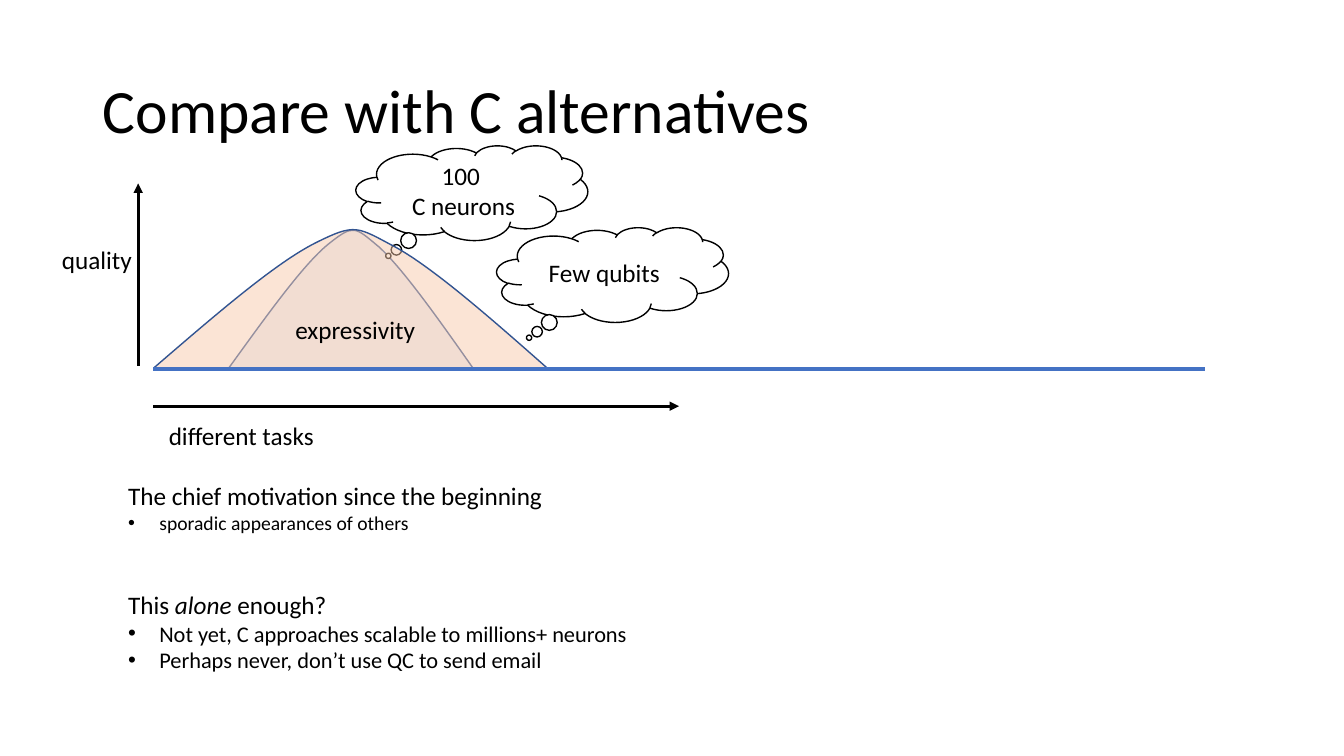
import lxml.etree
import pptx
import pptx.dml.color
import pptx.enum.shapes
import pptx.enum.text
import pptx.oxml.ns
import pptx.util

SLIDE_WIDTH = pptx.util.Inches(13.33)
SLIDE_HEIGHT = pptx.util.Inches(7.5)
FONT = "Calibri"
COLORS = {
    "ink": "000000",
    "paper": "FFFFFF",
    "baseline": "4472C4",
    "hill_edge": "325491",
    "neurons": "DAE3F3",
    "qubits": "F8CBAD",
}
HILL_TOP = 30.4
HILL_BOTTOM = 48.67
ALIGN = pptx.enum.text.PP_ALIGN
ANCHOR = pptx.enum.text.MSO_ANCHOR


def columns(count):
    """Length of a number of columns, 100 to the slide's width."""
    return round(SLIDE_WIDTH * count / 100)


def rows(count):
    """Length of a number of rows, 100 to the slide's height."""
    return round(SLIDE_HEIGHT * count / 100)


def box(left, top, width, height):
    return columns(left), rows(top), columns(width), rows(height)


def color(name):
    return pptx.dml.color.RGBColor.from_string(COLORS[name])


def add_xml(parent, tag, **attributes):
    return lxml.etree.SubElement(parent, pptx.oxml.ns.qn(tag), attributes)


def write(paragraph, text, size=18, align=ALIGN.LEFT, spacing=1.0, italic=None):
    """Fill a paragraph; the part given as italic is slanted."""
    paragraph.alignment = align
    paragraph.line_spacing = spacing
    paragraph.space_before = pptx.util.Pt(0)
    before, slanted, after = text.partition(italic) if italic else (text, "", "")
    for part in filter(None, (before, slanted, after)):
        run = paragraph.add_run()
        run.text = part
        run.font.name = FONT
        run.font.size = pptx.util.Pt(size)
        run.font.italic = part == italic
        run.font.color.rgb = color("ink")


def place(placeholder, area):
    placeholder.left, placeholder.top, placeholder.width, placeholder.height = area
    placeholder.text_frame.word_wrap = True
    placeholder.text_frame.auto_size = pptx.enum.text.MSO_AUTO_SIZE.NONE


def set_indent(paragraph, margin, hanging, bullet):
    properties = paragraph._p.get_or_add_pPr()
    properties.set("marL", str(pptx.util.Inches(margin)))
    properties.set("indent", str(pptx.util.Inches(-hanging)))
    if bullet:
        add_xml(properties, "a:buFont", typeface="Arial")
        add_xml(properties, "a:buChar", char="•")
    else:
        add_xml(properties, "a:buNone")


def fill_list(placeholder, area, heading, points, point_size, italic=None):
    place(placeholder, area)
    frame = placeholder.text_frame
    frame.vertical_anchor = ANCHOR.TOP
    first = frame.paragraphs[0]
    first.level = 1
    write(first, heading, italic=italic)
    set_indent(first, 0.5, 0, bullet=False)
    for point in points:
        paragraph = frame.add_paragraph()
        paragraph.level = 1
        write(paragraph, point, size=point_size)
        set_indent(paragraph, 0.81, 0.31, bullet=True)


def add_label(slide, text, left, top, width):
    label = slide.shapes.add_textbox(*box(left, top, width, 5.33))
    label.text_frame.word_wrap = True
    write(label.text_frame.paragraphs[0], text)


def add_line(slide, start, end, weight, color_name="ink", arrow=False):
    line = slide.shapes.add_connector(
        pptx.enum.shapes.MSO_CONNECTOR.STRAIGHT,
        columns(start[0]), rows(start[1]), columns(end[0]), rows(end[1]))
    line.line.color.rgb = color(color_name)
    line.line.width = pptx.util.Pt(weight)
    if arrow:
        add_xml(line.line._get_or_add_ln(), "a:tailEnd", type="triangle")
    add_xml(line._element.spPr, "a:effectLst")


def curve_outline(shape, points):
    """Redraw a freeform as a chain of cubic curves through the points."""
    outline = next(shape._element.iter(pptx.oxml.ns.qn("a:path")))
    for segment in list(outline):
        outline.remove(segment)
    for i, (x, y) in enumerate(points):
        if i == 0:
            segment = add_xml(outline, "a:moveTo")
        elif i % 3 == 1:
            segment = add_xml(outline, "a:cubicBezTo")
        add_xml(segment, "a:pt", x=str(columns(x) - shape.left),
                y=str(rows(y) - shape.top))


def add_hill(slide, points, fill_name):
    left, right = points[0][0], points[-1][0]
    builder = slide.shapes.build_freeform(columns(left), rows(HILL_BOTTOM))
    builder.add_line_segments(
        [(columns(left), rows(HILL_TOP)), (columns(right), rows(HILL_BOTTOM))],
        close=False)
    hill = builder.convert_to_shape()
    curve_outline(hill, points)
    hill.shadow.inherit = False
    hill.fill.solid()
    hill.fill.fore_color.rgb = color(fill_name)
    solid = hill._element.spPr.find(pptx.oxml.ns.qn("a:solidFill"))
    add_xml(solid[0], "a:alpha", val="50000")
    hill.line.color.rgb = color("hill_edge")
    hill.line.width = pptx.util.Pt(1)


def add_thought(slide, left, top, lines):
    cloud = slide.shapes.add_shape(
        pptx.enum.shapes.MSO_SHAPE.CLOUD_CALLOUT, *box(left, top, 17.25, 12.53))
    cloud.adjustments[0] = -0.36
    cloud.adjustments[1] = 0.665
    cloud.shadow.inherit = False
    cloud.fill.solid()
    cloud.fill.fore_color.rgb = color("paper")
    cloud.line.color.rgb = color("ink")
    cloud.line.width = pptx.util.Pt(1)
    frame = cloud.text_frame
    frame.word_wrap = True
    frame.vertical_anchor = ANCHOR.MIDDLE
    for i, text in enumerate(lines):
        paragraph = frame.add_paragraph() if i else frame.paragraphs[0]
        write(paragraph, text, align=ALIGN.CENTER)


def main():
    deck = pptx.Presentation()
    deck.slide_width, deck.slide_height = SLIDE_WIDTH, SLIDE_HEIGHT
    slide = deck.slides.add_slide(deck.slide_layouts.get_by_name("Two Content"))
    title, motivation, verdict = slide.placeholders

    place(title, box(6.9, 5.33, 86.25, 19.33))
    title.text_frame.vertical_anchor = ANCHOR.MIDDLE
    write(title.text_frame.paragraphs[0], "Compare with C alternatives",
          size=44, spacing=0.9)

    add_hill(slide, [(17.03, HILL_BOTTOM), (19.8, 41.87), (22.58, 34.93),
                     (24.45, 32.27), (26.33, 29.6), (26.4, 30), (28.2, 32.67),
                     (29.93, 35.47), (32.55, 42), (35.18, HILL_BOTTOM)], "neurons")
    add_line(slide, (10.28, 48.4), (10.28, 24.27), 2.25, arrow=True)
    add_label(slide, "quality", 3.87, 31.6, 9.9)
    add_line(slide, (11.4, 53.73), (50.53, 53.73), 2.25, arrow=True)
    add_label(slide, "different tasks", 11.82, 54.93, 14.7)
    add_thought(slide, 26.48, 19.25, ["100 ", "C neurons"])
    add_hill(slide, [(11.45, HILL_BOTTOM), (15.98, 41.73), (20.48, 34.8),
                     (23.48, 32.13), (26.48, 29.47), (26.55, 30), (29.4, 32.67),
                     (32.25, 35.47), (36.45, 42), (40.65, 48.6)], "qubits")
    add_label(slide, "expressivity", 21.23, 40.93, 14.48)
    add_line(slide, (11.4, 48.8), (89.65, 48.8), 3, "baseline")
    add_thought(slide, 36.95, 30.08, ["Few qubits"])

    fill_list(motivation, box(5.03, 62.93, 50.03, 8.53),
              "The chief motivation since the beginning",
              ["sporadic appearances of others"], 14)
    fill_list(verdict, box(5.03, 77.3, 50.03, 12.53), "This alone enough?",
              ["Not yet, C approaches scalable to millions+ neurons",
               "Perhaps never, don’t use QC to send email"], 16, italic="alone ")
    deck.save("out.pptx")


if __name__ == "__main__":
    main()
